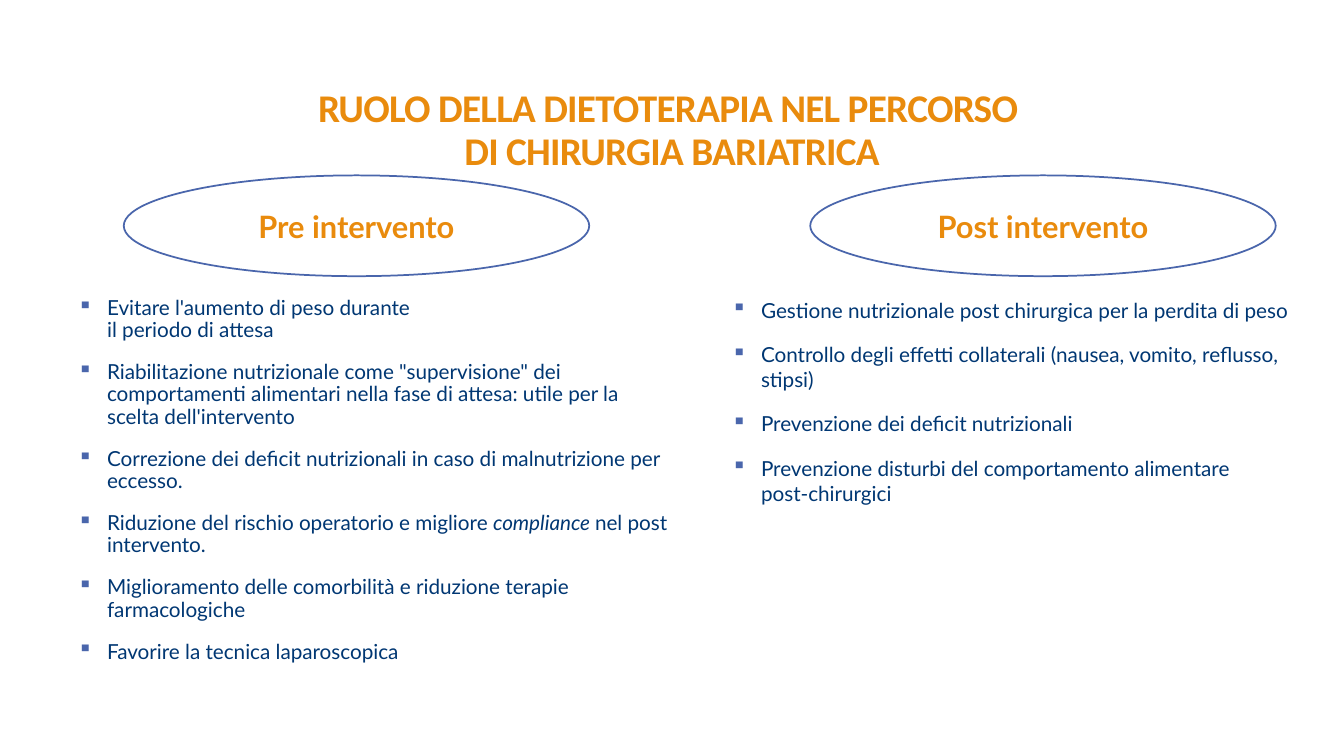
from lxml import etree
from pptx import Presentation
from pptx.dml.color import RGBColor
from pptx.enum.shapes import MSO_SHAPE
from pptx.enum.text import MSO_ANCHOR, PP_ALIGN
from pptx.oxml.ns import qn
from pptx.util import Cm, Pt

ELLIPSE = MSO_SHAPE.OVAL
CENTER = PP_ALIGN.CENTER
MIDDLE, BOTTOM = MSO_ANCHOR.MIDDLE, MSO_ANCHOR.BOTTOM

ORANGE = RGBColor(0xE9, 0x8B, 0x0D)
NAVY = RGBColor(0x00, 0x37, 0x73)
BLUE = RGBColor(0x4A, 0x66, 0xAC)
WHITE = RGBColor(0xFF, 0xFF, 0xFF)

SLIDE_WIDTH, SLIDE_HEIGHT = Cm(33.87), Cm(19.05)
COLUMN_WIDTH = Cm(14.96)
LABEL_TOP, LABEL_WIDTH, LABEL_HEIGHT = Cm(4.42), Cm(11.73), Cm(2.54)
LIST_TOP = Cm(7.37)
BULLET_INDENT = Cm(0.74)

TITLE_LINES = ["RUOLO DELLA DIETOTERAPIA NEL PERCORSO ", "DI CHIRURGIA BARIATRICA"]

# Each item is a list of lines; each line is a list of (text, italic) spans.
BEFORE_SURGERY = [
    [[("Evitare l'aumento di peso durante ", False)],
     [("il periodo di attesa", False)]],
    [[("Riabilitazione nutrizionale come \"supervisione\" dei comportamenti "
       "alimentari nella fase di attesa: utile per la scelta dell'intervento", False)]],
    [[("Correzione dei deficit nutrizionali in caso di malnutrizione per eccesso.", False)]],
    [[("Riduzione del rischio operatorio e migliore ", False),
      ("compliance ", True), ("nel post intervento.", False)]],
    [[("Miglioramento delle comorbilità e riduzione terapie farmacologiche", False)]],
    [[("Favorire la tecnica laparoscopica", False)]],
]
AFTER_SURGERY = [
    [[("Gestione nutrizionale post chirurgica per la perdita di peso", False)]],
    [[("Controllo degli effetti collaterali (nausea, vomito, reflusso, stipsi)", False)]],
    [[("Prevenzione dei deficit nutrizionali", False)]],
    [[("Prevenzione disturbi del comportamento alimentare ", False)],
     [("post-chirurgici", False)]],
]


def add_span(para, text, font_name, size, color, bold=False, italic=False):
    span = para.add_run()
    span.text = text
    font = span.font
    font.name, font.size, font.bold, font.italic = font_name, Pt(size), bold, italic
    font.color.rgb = color
    return span


def add_bullet(para):
    properties = para._p.get_or_add_pPr()
    properties.set("marL", str(BULLET_INDENT))
    properties.set("indent", str(-BULLET_INDENT))
    color = etree.SubElement(properties, qn("a:buClr"))
    etree.SubElement(color, qn("a:srgbClr"), val=str(BLUE))
    etree.SubElement(properties, qn("a:buChar"), char="▪")


def add_title(page, left, top, width, height):
    frame = page.shapes.add_textbox(left, top, width, height).text_frame
    frame.word_wrap = True
    frame.vertical_anchor = BOTTOM
    para = frame.paragraphs[0]
    para.alignment = CENTER
    para.line_spacing = 0.9
    for index, line in enumerate(TITLE_LINES):
        if index:
            para.add_line_break()
        span = add_span(para, line, "Calibri", 28, ORANGE, bold=True)
        span.font._element.set("spc", "-50")


def add_label(page, left, top, text):
    label = page.shapes.add_shape(ELLIPSE, left, top, LABEL_WIDTH, LABEL_HEIGHT)
    label.shadow.inherit = False
    label.fill.solid()
    label.fill.fore_color.rgb = WHITE
    label.line.color.rgb = BLUE
    label.line.width = Pt(1.25)
    label.text_frame.vertical_anchor = MIDDLE
    para = label.text_frame.paragraphs[0]
    para.alignment = CENTER
    add_span(para, text, "Lato", 22, ORANGE, bold=True)


def add_list(page, left, top, height, items, line_spacing):
    frame = page.shapes.add_textbox(left, top, COLUMN_WIDTH, height).text_frame
    frame.word_wrap = True
    frame.margin_left = frame.margin_right = 0
    for number, lines in enumerate(items):
        para = frame.add_paragraph() if number else frame.paragraphs[0]
        add_bullet(para)
        para.line_spacing = line_spacing
        para.space_before = Pt(12 if number else 0)
        para.space_after = Pt(2)
        for index, line in enumerate(lines):
            if index:
                para.add_line_break()
            for text, italic in line:
                add_span(para, text, "Lato", 14.8, NAVY, italic=italic)


def add_column(page, left, label_offset, label, list_height, items, line_spacing):
    add_list(page, left, LIST_TOP, list_height, items, line_spacing)
    add_label(page, left + label_offset, LABEL_TOP, label)


def main():
    deck = Presentation()
    deck.slide_width, deck.slide_height = SLIDE_WIDTH, SLIDE_HEIGHT
    page = deck.slides.add_slide(deck.slide_layouts[6])
    add_title(page, 0, Cm(2), SLIDE_WIDTH, Cm(2.5))
    add_column(page, Cm(1.96), Cm(1.16), "Pre intervento", Cm(9.9), BEFORE_SURGERY, 0.9)
    add_column(page, Cm(18.44), Cm(1.98), "Post intervento", Cm(5.92), AFTER_SURGERY, 1.0)
    deck.save("out.pptx")


if __name__ == "__main__":
    main()
